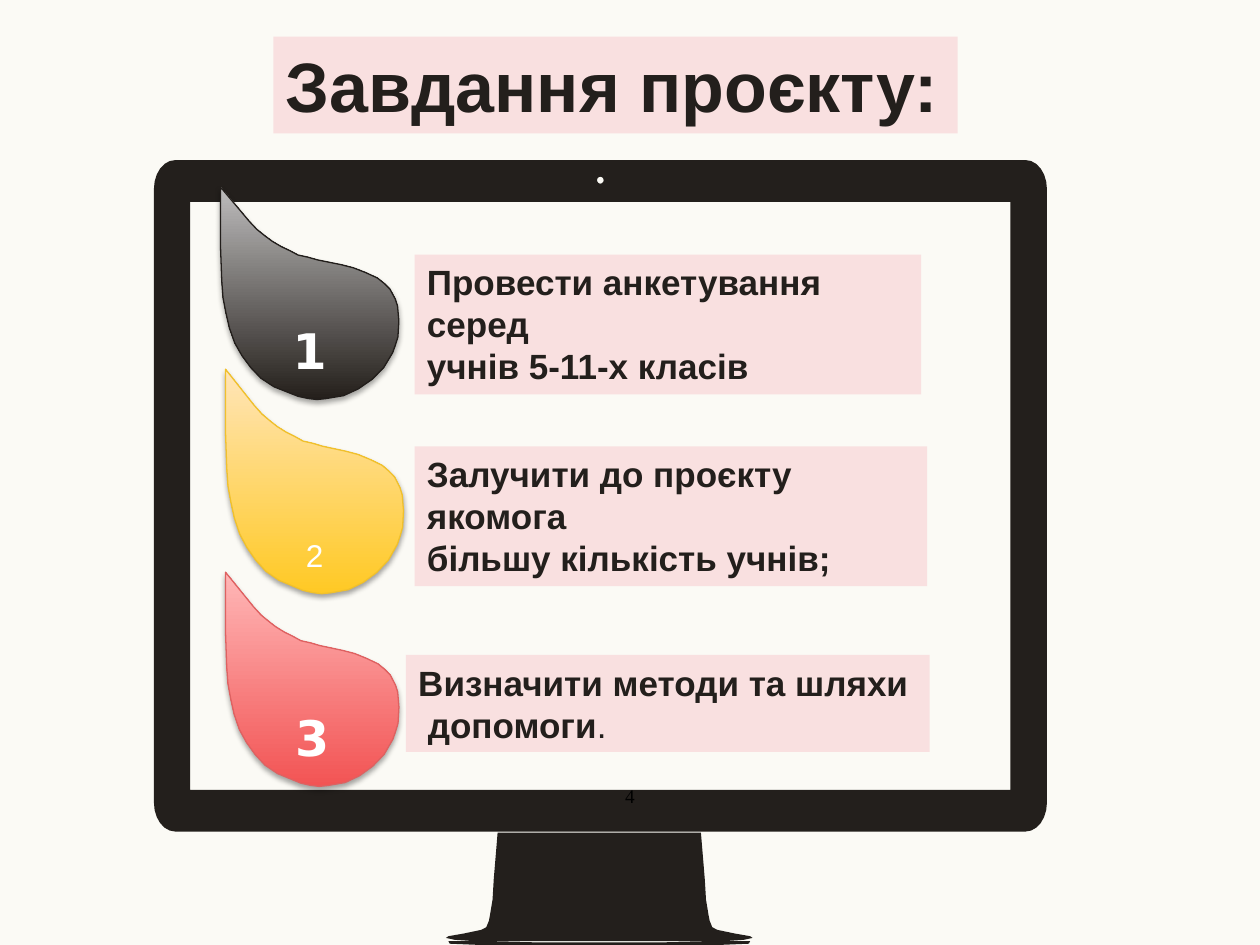
import math
import pptx
import pptx.util
import pptx.dml.color
import pptx.enum.shapes
import pptx.enum.text
import lxml.etree

Pt = pptx.util.Pt
Align = pptx.enum.text.PP_ALIGN
Anchor = pptx.enum.text.MSO_ANCHOR
Fit = pptx.enum.text.MSO_AUTO_SIZE


class Theme:
    page, ink, pink = "FBFAF5", "231F1C", "F9E0E0"
    white, black = "FFFFFF", "000000"
    # Each drop: bottom, top, outline
    drops = [("241F1B", "BEBDBD", "221E1B"),
             ("FFC924", "FFE5B8", "F0C02C"),
             ("F25454", "FFB7B7", "DE6161")]
    head, body, mark, plain, foot = 40, 20, 28, 18, 11
    sans, digit, serif = "Arial", "DejaVu Sans", "Times New Roman"


# Drop outline, in percent of its box
DROP = [(0, 0), (11, 11), (16, 16), (20.5, 20), (25, 23), (29, 25.5),
        (34, 28), (39, 30), (43.5, 32), (49, 33), (54.5, 34.3),
        (59.8, 35.2), (67.5, 36.5), (74.5, 38), (81.5, 40.3), (88, 42.8),
        (92, 45.5), (95, 48), (98, 52.7), (99.3, 56), (100, 63),
        (99.5, 70.5), (98, 74.5), (96.5, 78), (91.5, 85), (85, 90.5),
        (77.3, 95), (69, 98.2), (59, 99.6), (54, 100), (49, 99.5),
        (43.5, 98.5), (39, 97), (30, 94), (22.7, 90), (17, 85), (12, 79.3),
        (8, 73.4), (5, 66.3), (3, 59), (1.4, 52), (0.7, 44), (0, 28)]

# Left halves of the stand and its base, in points
STAND = [(284.4, 475.9), (282.2, 502.6), (281.5, 514.1), (280.1, 522.7),
         (279.4, 526.3), (277.9, 529.9), (275, 531.4), (265, 533.5),
         (256.3, 535), (254.9, 536), (259.9, 537.1), (270.7, 537.8),
         (287.3, 537.8)]
BASE = [(309.6, 538.6), (272.9, 537.8), (256.3, 537.8), (257, 539.3),
        (274.3, 540), (309.6, 540)]


def rgb(code):
    return pptx.dml.color.RGBColor.from_string(code)


def put(item, style):
    for name, value in style.items():
        setattr(item, name, value)


def paint(shape, code):
    shape.fill.solid()
    shape.fill.fore_color.rgb = rgb(code)
    shape.line.fill.background()
    shape.shadow.inherit = False


def write(par, text, size, face, code, bold=False):
    run = par.add_run()
    run.text = text
    put(run.font, {"size": Pt(size), "name": face, "bold": bold})
    run.font.color.rgb = rgb(code)


def outline(slide, loops):
    """Draw closed loops of points as one freeform."""
    form = None
    for loop in loops:
        dots = [(x * 100, y * 100) for x, y in loop]
        if form is None:
            form = slide.shapes.build_freeform(*dots[0], scale=Pt(1) / 100)
        else:
            form.move_to(*dots[0])
        form.add_line_segments(dots[1:], close=True)
    return form.convert_to_shape()


def arc(x, y, wide, high, start, sweep, steps):
    turns = [math.radians(start + sweep * i / steps) for i in range(steps + 1)]
    return [(x + wide * math.cos(t), y + high * math.sin(t)) for t in turns]


def mirror(half, axis=342.5):
    return half + [(2 * axis - x, y) for x, y in reversed(half)]


def screen(slide):
    left, top, right, low = 88, 91.5, 598.3, 475.2
    wide, high = 12.2, 16.5
    frame = []
    for x, y, start in [(left + wide, top + high, 180),
                        (right - wide, top + high, 270),
                        (right - wide, low - high, 0),
                        (left + wide, low - high, 90)]:
        frame += arc(x, y, wide, high, start, 90, 6)
    lens = arc(343.1, 103, 1.9, 2, 0, -330, 11)
    glass = [(108.7, 115.4), (108.7, 451.4), (577.4, 451.4), (577.4, 115.4)]
    shape = outline(slide, [frame, glass, lens, mirror(STAND), mirror(BASE)])
    paint(shape, Theme.ink)


def shade(shape):
    shape.shadow.inherit = False
    space = "http://schemas.openxmlformats.org/drawingml/2006/main"
    list_ = shape.element.spPr.find("{%s}effectLst" % space)
    list_.append(lxml.etree.fromstring(
        f'<a:outerShdw xmlns:a="{space}" blurRad="{Pt(3.1)}" dist="{Pt(1.8)}"'
        ' dir="5400000" rotWithShape="0"><a:srgbClr val="000000">'
        '<a:alpha val="35000"/></a:srgbClr></a:outerShdw>'))


def drop(slide, box, tones, text, size, face, bold):
    left, top, wide, high = box
    shape = outline(slide, [[(left + x * wide / 100, top + y * high / 100)
                             for x, y in DROP]])
    low, peak, edge = tones
    shape.fill.gradient()
    shape.fill.gradient_angle = 90
    for stop, code in zip(shape.fill.gradient_stops, (low, peak)):
        stop.color.rgb = rgb(code)
    shape.line.color.rgb = rgb(edge)
    shape.line.width = Pt(0.75)
    shade(shape)
    frame = shape.text_frame
    put(frame, {"vertical_anchor": Anchor.BOTTOM, "word_wrap": True,
                "margin_left": Pt(7.2), "margin_right": Pt(7.2),
                "margin_top": Pt(3.6), "margin_bottom": Pt(11.5)})
    par = frame.paragraphs[0]
    par.alignment = Align.CENTER
    write(par, text, size, face, Theme.white, bold)


def panel(slide, box, lines, size, wrap=True, hang=0):
    """Draw a pink panel; each line is a list of (text, bold) parts."""
    shape = slide.shapes.add_shape(
        pptx.enum.shapes.MSO_SHAPE.RECTANGLE, *map(Pt, box))
    paint(shape, Theme.pink)
    frame = shape.text_frame
    put(frame, {"word_wrap": wrap, "vertical_anchor": Anchor.TOP,
                "auto_size": Fit.SHAPE_TO_FIT_TEXT})
    for i, parts in enumerate(lines):
        par = frame.add_paragraph() if i else frame.paragraphs[0]
        par.alignment = Align.LEFT
        if hang:
            props = par._p.get_or_add_pPr()
            props.set("marL", str(Pt(hang)))
            props.set("indent", str(-Pt(hang)))
        for text, bold in parts:
            write(par, text, size, Theme.sans, Theme.ink, bold)


def number(slide, box, text):
    frame = slide.shapes.add_textbox(*map(Pt, box)).text_frame
    sides = ("left", "right", "top", "bottom")
    put(frame, {"margin_" + side: Pt(7.2) for side in sides})
    frame.word_wrap = True
    par = frame.paragraphs[0]
    par.alignment = Align.CENTER
    write(par, text, Theme.foot, Theme.serif, Theme.black)


def main():
    deck = pptx.Presentation()
    put(deck, {"slide_width": Pt(720), "slide_height": Pt(540)})
    slide = deck.slides.add_slide(deck.slide_layouts[6])
    slide.background.fill.solid()
    slide.background.fill.fore_color.rgb = rgb(Theme.page)

    # Monitor, page number and title
    screen(slide)
    number(slide, (338.4, 441.4, 43.2, 19.4), "4")
    panel(slide, (156.2, 20.9, 391, 55.4), [[("Завдання проєкту:", True)]],
          Theme.head, wrap=False)

    # Numbered drops
    big = (Theme.mark, Theme.digit, True)
    small = (Theme.plain, Theme.sans, False)
    boxes = [(126, 106.9, 101.9, 121.4), (128.9, 211, 101.7, 128.3),
             (128.9, 327, 99.1, 122.4)]
    for i, (box, look) in enumerate(zip(boxes, (big, small, big))):
        drop(slide, box, Theme.drops[i], str(i + 1), *look)

    # Tasks
    panel(slide, (236.9, 145.5, 289.6, 79.9),
          [[("Провести анкетування серед", True)],
           [("учнів 5-11-х класів", True)]], Theme.body)
    panel(slide, (236.9, 255.1, 293, 79.9),
          [[("Залучити до проєкту якомога", True)],
           [("більшу кількість учнів;", True)]], Theme.body)
    panel(slide, (231.9, 374.3, 299.3, 55.4),
          [[("Визначити методи та шляхи допомоги", True), (".", False)]],
          Theme.body, hang=5.5)

    deck.save("out.pptx")


if __name__ == "__main__":
    main()
